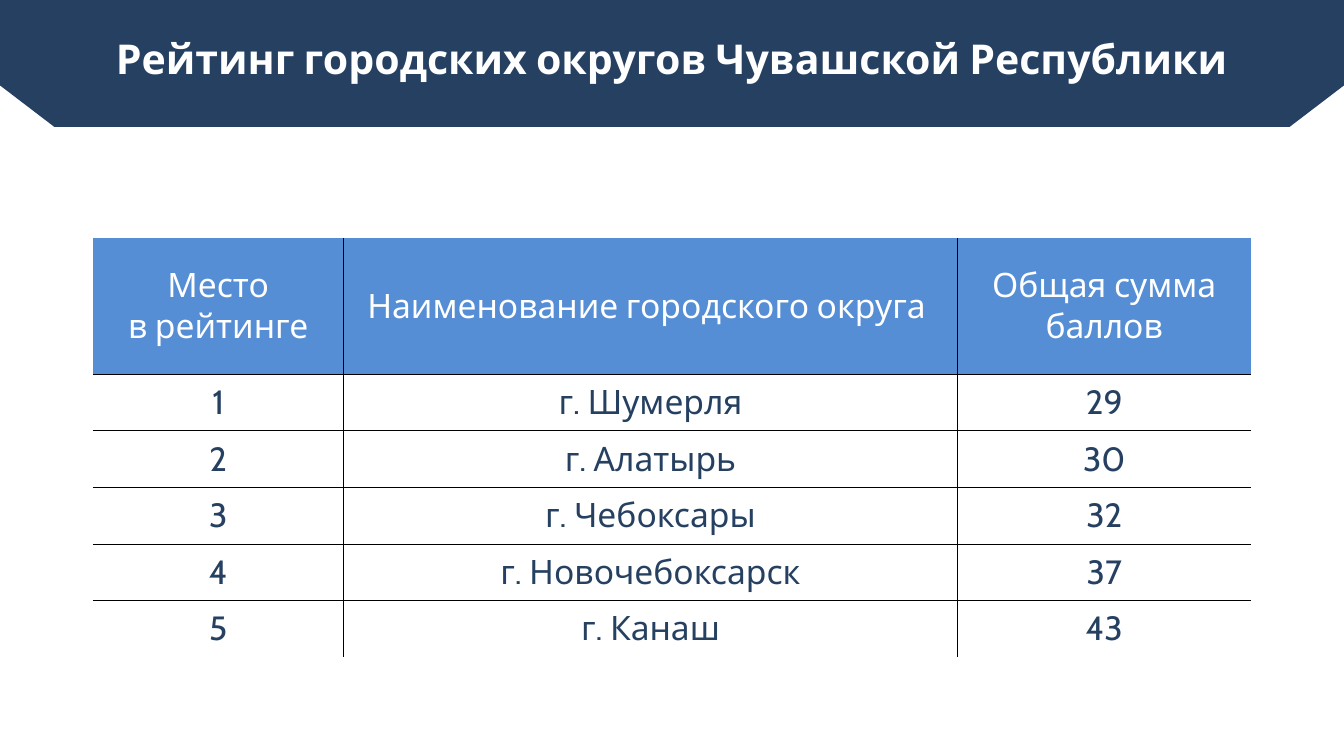
from dataclasses import dataclass

from lxml import etree
from pptx import Presentation
from pptx.dml.color import RGBColor
from pptx.enum.text import MSO_ANCHOR, PP_ALIGN
from pptx.oxml.ns import qn
from pptx.util import Pt

CENTER = PP_ALIGN.CENTER
MIDDLE = MSO_ANCHOR.MIDDLE


@dataclass(frozen=True)
class Theme:
    font: str = "Cabin"
    navy: RGBColor = RGBColor(0x25, 0x40, 0x61)
    blue: RGBColor = RGBColor(0x55, 0x8E, 0xD5)
    white: RGBColor = RGBColor(0xFF, 0xFF, 0xFF)
    rule: str = "000000"
    title_size: int = 44
    table_size: int = 36


THEME = Theme()

TITLE = "Рейтинг городских округов Чувашской Республики"
HEADER = ["Место\nв рейтинге", "Наименование городского округа ", "Общая сумма баллов"]
CITIES = [
    ("г. Шумерля", 29),
    ("г. Алатырь", 30),
    ("г. Чебоксары", 32),
    ("г. Новочебоксарск", 37),
    ("г. Канаш", 43),
]


def style_text(frame, size, color, bold=False):
    for paragraph in frame.paragraphs:
        paragraph.alignment = CENTER
        font = paragraph.font
        font.name, font.size, font.bold = THEME.font, Pt(size), bold
        font.color.rgb = color


def add_banner(slide, left, top, width, height):
    """Band with four cut corners that runs past the slide's upper edges."""
    cut_x, cut_y = 71.3, 54.4
    right, bottom = left + width, top + height
    corners = [
        (right - cut_x, top), (right, top + cut_y),
        (right, bottom - cut_y), (right - cut_x, bottom),
        (left + cut_x, bottom), (left, bottom - cut_y),
        (left, top + cut_y), (left + cut_x, top),
    ]
    points = [(Pt(x), Pt(y)) for x, y in corners]
    builder = slide.shapes.build_freeform(*points[0])
    builder.add_line_segments(points[1:], close=True)
    banner = builder.convert_to_shape()
    banner.shadow.inherit = False
    banner.fill.solid()
    banner.fill.fore_color.rgb = THEME.navy
    banner.line.fill.background()


def add_title(slide, left, top, width, height):
    title = slide.shapes.add_textbox(Pt(left), Pt(top), Pt(width), Pt(height))
    frame = title.text_frame
    frame.word_wrap = True
    frame.margin_left = frame.margin_right = frame.margin_top = frame.margin_bottom = 0
    frame.text = TITLE
    frame.paragraphs[0].line_spacing = Pt(44)
    style_text(frame, THEME.title_size, THEME.white, bold=True)


def set_border(cell, side, visible):
    properties = cell._tc.get_or_add_tcPr()
    line = etree.SubElement(properties, qn(f"a:ln{side}"), w=str(Pt(1)))
    if visible:
        fill = etree.SubElement(line, qn("a:solidFill"))
        etree.SubElement(fill, qn("a:srgbClr"), val=THEME.rule)
    else:
        etree.SubElement(line, qn("a:noFill"))


def add_rating_table(slide, left, top, width, height):
    rows = [HEADER] + [(place, *city) for place, city in enumerate(CITIES, 1)]
    last_row, last_column = len(rows) - 1, len(HEADER) - 1
    table = slide.shapes.add_table(
        len(rows), len(HEADER), Pt(left), Pt(top), Pt(width), Pt(height)).table
    table.first_row = table.horz_banding = False

    # Column widths and row heights
    place_width, total_width = 268.8, 314.8
    widths = [place_width, width - place_width - total_width, total_width]
    for column, column_width in zip(table.columns, widths):
        column.width = Pt(column_width)
    header_height = 146.2
    for index, row in enumerate(table.rows):
        row.height = Pt((height - header_height) / len(CITIES) if index else header_height)

    # Cells, ruled on inner edges only
    for r, values in enumerate(rows):
        for c, value in enumerate(values):
            cell = table.cell(r, c)
            cell.vertical_anchor = MIDDLE
            cell.margin_left = cell.margin_right = Pt(5)
            cell.margin_top = cell.margin_bottom = 0
            inner_edges = {"L": c > 0, "R": c < last_column, "T": r > 0, "B": r < last_row}
            for side, visible in inner_edges.items():
                set_border(cell, side, visible)
            if r == 0:
                cell.fill.solid()
                cell.fill.fore_color.rgb = THEME.blue
            else:
                cell.fill.background()
            cell.text_frame.text = str(value)
            style_text(cell.text_frame, THEME.table_size, THEME.navy if r else THEME.white)


def main():
    presentation = Presentation()
    presentation.slide_width, presentation.slide_height = Pt(1440), Pt(810)
    slide = presentation.slides.add_slide(presentation.slide_layouts[6])
    add_banner(slide, -13, -93, 1466, 229)
    add_title(slide, 108, 44.6, 1224, 44.6)
    add_rating_table(slide, 99.4, 254.9, 1241.2, 449.2)
    presentation.save("out.pptx")


if __name__ == "__main__":
    main()
